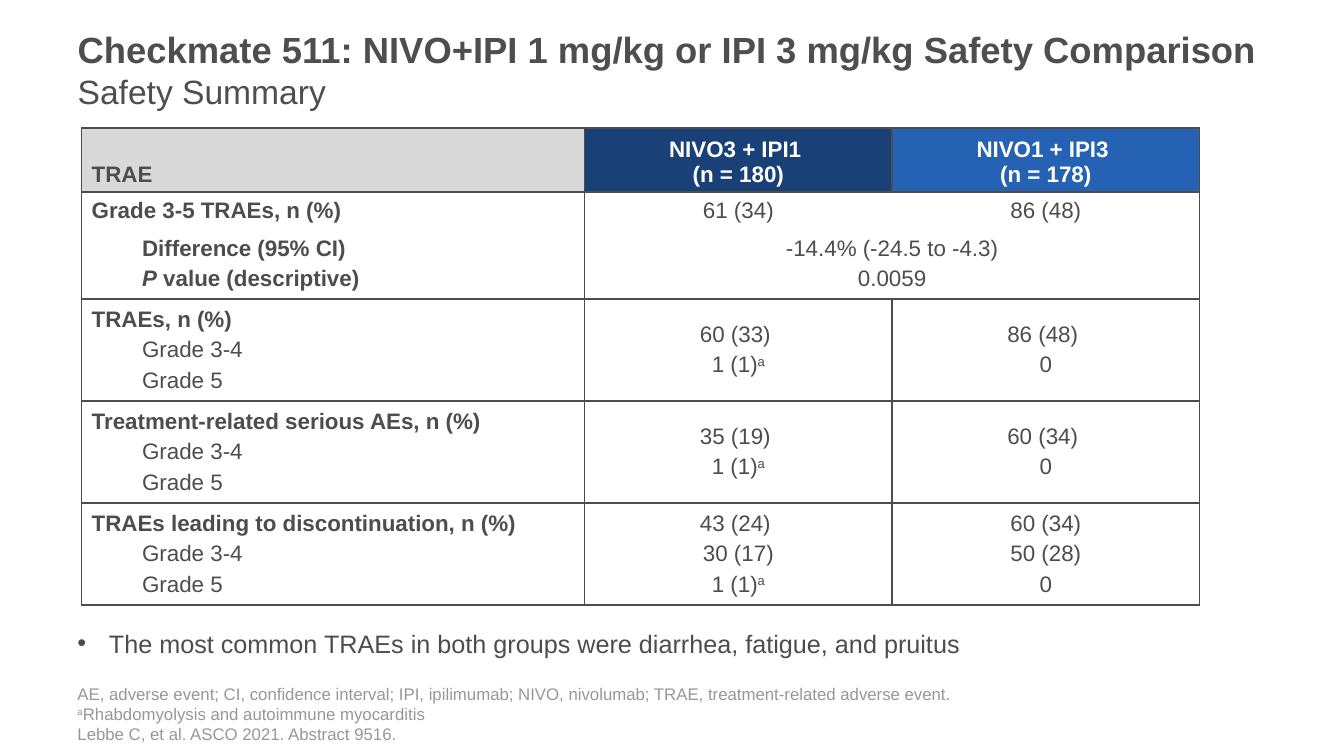
from dataclasses import dataclass
from typing import Optional

from lxml.etree import SubElement
from pptx import Presentation
from pptx.dml.color import RGBColor as RGB
from pptx.enum.text import MSO_ANCHOR as Anchor, MSO_AUTO_SIZE as AutoSize, PP_ALIGN as Align
from pptx.oxml.ns import qn
from pptx.util import Pt


@dataclass(frozen=True)
class Theme:
    font: str = "Arial"
    text: str = "4D4D4D"
    title: str = "4D4E4D"
    note: str = "979797"
    white: str = "FFFFFF"
    header_fills: tuple = ("D9D9D9", "194178", "2662B4")
    title_size: float = 26
    subtitle_size: float = 24
    bullet_size: float = 18
    table_size: float = 16
    note_size: float = 12


@dataclass(frozen=True)
class Line:
    text: str
    bold: bool = False
    indent: float = 0
    italic_lead: str = ""
    superscript: str = ""


@dataclass(frozen=True)
class Row:
    height: float
    cells: tuple
    space_after: float = 4
    anchor: Anchor = Anchor.MIDDLE


THEME = Theme()
LEFT = 48.24
TABLE_LEFT, TABLE_TOP = 58.3, 91.44
COL_WIDTHS = (359.3, 219.6, 219.6)
INDENT = 36
SIDES = "LRTB"
# Sides left without a line, keyed by (row, column)
OPEN_SIDES = {
    (1, 0): "B", (1, 1): "RB", (1, 2): "LB",
    (2, 0): "T", (2, 1): "T", (2, 2): "LT",
}


def grade_row(heading: str, left: tuple, right: tuple) -> Row:
    """Heading with two indented grades; the last left value has a note mark."""
    label = (Line(heading, bold=True), Line("Grade 3-4", indent=INDENT),
             Line("Grade 5", indent=INDENT))
    left_lines = (*map(Line, left), Line("1 (1)", superscript="a"))
    return Row(72.9, (label, left_lines, (*map(Line, right), Line("0"))))


ROWS = (
    Row(45.7, ((Line("TRAE", bold=True),),
               (Line("NIVO3 + IPI1 ", bold=True), Line("(n = 180)", bold=True)),
               (Line("NIVO1 + IPI3 ", bold=True), Line("(n = 178)", bold=True))),
        space_after=0, anchor=Anchor.BOTTOM),
    Row(25.7, ((Line("Grade 3-5 TRAEs, n (%)", bold=True),),
               (Line("61 (34)"),), (Line("86 (48)"),)), space_after=0),
    Row(50, ((Line("Difference (95% CI)", bold=True, indent=INDENT),
              Line(" value (descriptive)", bold=True, indent=INDENT, italic_lead="P")),
             (Line("-14.4% (-24.5 to -4.3)"), Line("0.0059")))),
    grade_row("TRAEs, n (%)", ("60 (33) ",), ("86 (48) ",)),
    grade_row("Treatment-related serious AEs, n (%)", ("35 (19) ",), ("60 (34) ",)),
    grade_row("TRAEs leading to discontinuation, n (%)",
              ("43 (24) ", "30 (17)"), ("60 (34)", "50 (28)")),
)


def style(r, size: float, color: str, bold: bool = False, raised: bool = False) -> None:
    r.font.name, r.font.size, r.font.bold = THEME.font, Pt(size), bold
    r.font.color.rgb = RGB.from_string(color)
    if raised:
        r._r.get_or_add_rPr().set("baseline", "30000")


def add_run(p, text: str):
    r = p.add_run()
    r.text = text
    return r


def add_textbox(slide, top: float, width: float, height: float):
    s = slide.shapes.add_textbox(Pt(LEFT), Pt(top), Pt(width), Pt(height))
    s.text_frame.word_wrap = True
    return s.text_frame


def set_borders(cell, open_sides: str) -> None:
    tcPr = cell._tc.get_or_add_tcPr()
    for side in SIDES:
        ln = SubElement(tcPr, qn(f"a:ln{side}"), w=str(Pt(1)))
        if side in open_sides:
            SubElement(ln, qn("a:noFill"))
        else:
            fill = SubElement(ln, qn("a:solidFill"))
            SubElement(fill, qn("a:srgbClr"), val=THEME.text)


def set_fill(cell, color: Optional[str]) -> None:
    if color is None:
        cell.fill.background()
    else:
        cell.fill.solid()
        cell.fill.fore_color.rgb = RGB.from_string(color)


def write_cell(cell, lines: tuple, row: Row, align: Align, color: str) -> None:
    cell.vertical_anchor = row.anchor
    tf = cell.text_frame
    for i, line in enumerate(lines):
        p = tf.paragraphs[0] if i == 0 else tf.add_paragraph()
        p.alignment = align
        p.space_after = Pt(row.space_after)
        if line.indent:
            pPr = p._p.get_or_add_pPr()
            pPr.set("marL", str(Pt(line.indent)))
            pPr.set("indent", "0")
            p.level = 1
        if line.italic_lead:
            add_run(p, line.italic_lead).font.italic = True
        add_run(p, line.text)
        for r in p.runs:
            style(r, THEME.table_size, color, line.bold)
        if line.superscript:
            style(add_run(p, line.superscript), THEME.table_size, color, raised=True)


def add_safety_table(slide) -> None:
    s = slide.shapes.add_table(len(ROWS), len(COL_WIDTHS), Pt(TABLE_LEFT), Pt(TABLE_TOP),
                               Pt(sum(COL_WIDTHS)), Pt(sum(row.height for row in ROWS)))
    table = s.table
    table.first_row = table.horz_banding = False
    for column, width in zip(table.columns, COL_WIDTHS):
        column.width = Pt(width)
    for i, row in enumerate(ROWS):
        table.rows[i].height = Pt(row.height)
        for j in range(len(COL_WIDTHS)):
            set_borders(table.cell(i, j), OPEN_SIDES.get((i, j), ""))
            set_fill(table.cell(i, j), THEME.header_fills[j] if i == 0 else None)
        if len(row.cells) < len(COL_WIDTHS):
            table.cell(i, 1).merge(table.cell(i, 2))
        for j, lines in enumerate(row.cells):
            color = THEME.white if i == 0 and j else THEME.text
            write_cell(table.cell(i, j), lines, row, Align.CENTER if j else Align.LEFT, color)


def add_title(slide) -> None:
    s = slide.shapes.title
    s.left, s.top, s.width, s.height = Pt(LEFT), Pt(15.84), Pt(887.76), Pt(93.6)
    tf = s.text_frame
    tf.text = "Checkmate 511: NIVO+IPI 1 mg/kg or IPI 3 mg/kg Safety Comparison \vSafety Summary"
    tf.word_wrap, tf.auto_size, tf.vertical_anchor = True, AutoSize.NONE, Anchor.TOP
    p = tf.paragraphs[0]
    p.alignment = Align.LEFT
    heading, subtitle = p.runs
    style(heading, THEME.title_size, THEME.title, bold=True)
    style(subtitle, THEME.subtitle_size, THEME.title)


def add_bullet(slide) -> None:
    p = add_textbox(slide, 445, 755.28, 28.8).paragraphs[0]
    p.text = "The most common TRAEs in both groups were diarrhea, fatigue, and pruitus"
    pPr = p._p.get_or_add_pPr()
    pPr.set("marL", str(Pt(22.5)))
    pPr.set("indent", str(-Pt(22.5)))
    SubElement(pPr, qn("a:buFont"), typeface=THEME.font)
    SubElement(pPr, qn("a:buChar"), char="•")
    style(p.runs[0], THEME.bullet_size, THEME.text)


def add_footnotes(slide) -> None:
    tf = add_textbox(slide, 500.4, 846, 34.56)
    tf.vertical_anchor = Anchor.BOTTOM
    tf.text = ("AE, adverse event; CI, confidence interval; IPI, ipilimumab; NIVO, nivolumab; "
               "TRAE, treatment-related adverse event.\va\v"
               "Lebbe C, et al. ASCO 2021. Abstract 9516.")
    p = tf.paragraphs[0]
    mark = p.runs[1]
    rhabdo = add_run(p, "Rhabdomyolysis and autoimmune myocarditis")
    mark._r.addnext(rhabdo._r)
    for r in p.runs:
        style(r, THEME.note_size, THEME.note, raised=r.text == "a")


def main() -> None:
    prs = Presentation()
    prs.slide_width, prs.slide_height = Pt(960), Pt(540)
    slide = prs.slides.add_slide(prs.slide_layouts[5])
    add_title(slide)
    add_footnotes(slide)
    add_bullet(slide)
    add_safety_table(slide)
    prs.save("out.pptx")


if __name__ == "__main__":
    main()
